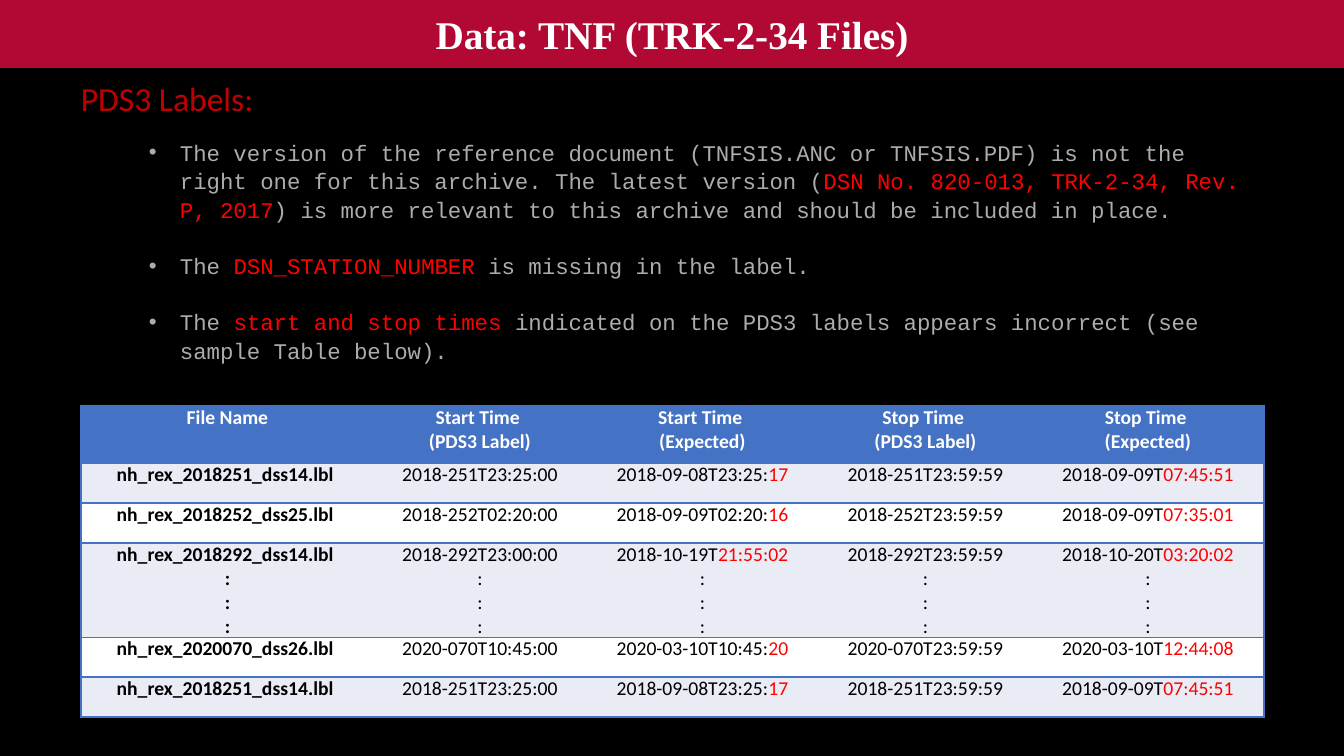
from lxml import etree
from pptx import Presentation
from pptx.dml.color import RGBColor
from pptx.enum.shapes import MSO_SHAPE
from pptx.enum.text import MSO_ANCHOR, MSO_AUTO_SIZE, PP_ALIGN
from pptx.oxml.ns import qn
from pptx.util import Pt

EMU_PER_PX = 914400 / 100.8
RECTANGLE = MSO_SHAPE.RECTANGLE
MIDDLE = MSO_ANCHOR.MIDDLE
GROW = MSO_AUTO_SIZE.SHAPE_TO_FIT_TEXT
CENTER = PP_ALIGN.CENTER
LEFT = PP_ALIGN.LEFT

BLACK = "000000"
WHITE = "FFFFFF"
CRIMSON = "B20834"
DARK_RED = "C00000"
RED = "FF0000"
GRAY = "AFABAB"
BLUE = "4472C4"
PALE_BLUE = "E9EBF5"

TITLE = "Data: TNF (TRK-2-34 Files)"
HEADING = "PDS3 Labels:"
BULLETS = [
    "The version of the reference document (TNFSIS.ANC or TNFSIS.PDF) is not the "
    "right one for this archive. The latest version (|DSN No. 820-013, TRK-2-34, "
    "Rev. P, 2017|) is more relevant to this archive and should be included in place.",
    "The |DSN_STATION_NUMBER |is missing in the label.",
    "The |start and stop times |indicated on the PDS3 labels appears incorrect "
    "(see sample Table below).",
]
HEADER = [
    ["File Name"],
    ["Start Time ", "(PDS3 Label)"],
    ["Start Time ", "(Expected)"],
    ["Stop Time ", "(PDS3 Label)"],
    ["Stop Time ", "(Expected)"],
]
FILES = [
    ["nh_rex_2018251_dss14.lbl ", "2018-251T23:25:00", "2018-09-08T23:25:|17",
     "2018-251T23:59:59", "2018-09-09T|07:45:51"],
    ["nh_rex_2018252_dss25.lbl ", "2018-252T02:20:00", "2018-09-09T02:20:|16",
     "2018-252T23:59:59", "2018-09-09T|07:35:01"],
    ["nh_rex_2018292_dss14.lbl ", "2018-292T23:00:00", "2018-10-19T|21:55:02",
     "2018-292T23:59:59", "2018-10-20T|03:20:02"],
    ["nh_rex_2020070_dss26.lbl ", "2020-070T10:45:00", "2020-03-10T10:45:|20",
     "2020-070T23:59:59", "2020-03-10T|12:44:08"],
    ["nh_rex_2018251_dss14.lbl ", "2018-251T23:25:00", "2018-09-08T23:25:|17",
     "2018-251T23:59:59", "2018-09-09T|07:45:51"],
]
ELLIPSIS_ROW = 2
ELLIPSIS = [":"] * 3
COLUMN_WIDTHS = [293, 212, 233, 213, 232]
ROW_HEIGHTS = [57, 40, 40, 94, 40, 40]


def px(length):
    return round(length * EMU_PER_PX)


def area(*lengths):
    return [px(length) for length in lengths]


def rgb(color):
    return RGBColor.from_string(color)


def paint(target, color):
    target.fill.solid()
    target.fill.fore_color.rgb = rgb(color)


def write(frame, lines, font, size, color, bold=False, align=LEFT):
    for index, line in enumerate(lines):
        para = frame.paragraphs[0] if index == 0 else frame.add_paragraph()
        para.alignment = align
        para.font.name = font
        para.font.size = Pt(size)
        para.font.bold = bold
        para.font.color.rgb = rgb(color)
        for position, text in enumerate(line.split("|")):
            span = para.add_run()
            span.text = text
            if position % 2:
                span.font.color.rgb = rgb(RED)


def add_banner(page):
    banner = page.shapes.add_shape(RECTANGLE, *area(0, 0, 1344, 68))
    banner.shadow.inherit = False
    banner.line.fill.background()
    paint(banner, CRIMSON)
    banner.text_frame.vertical_anchor = MIDDLE
    write(banner.text_frame, [TITLE], "Times New Roman", 28, WHITE, True, CENTER)


def add_text(page, place, lines, font, size, color, wrap):
    box = page.shapes.add_textbox(*area(*place))
    frame = box.text_frame
    frame.word_wrap = wrap
    frame.auto_size = GROW
    write(frame, lines, font, size, color)
    return frame


def add_bullets(frame, indent):
    for para in frame.paragraphs:
        para.line_spacing = 1.07
        if para.text != frame.paragraphs[-1].text:
            para.space_after = Pt(19.4)
        properties = para._p.get_or_add_pPr()
        properties.set("marL", str(px(indent)))
        properties.set("indent", str(-px(indent)))
        bullet_font = etree.Element(qn("a:buFont"), typeface="Arial")
        bullet = etree.Element(qn("a:buChar"), char="•")
        default_font = properties.find(qn("a:defRPr"))
        default_font.addprevious(bullet_font)
        default_font.addprevious(bullet)


def set_borders(cell, visible_sides):
    properties = cell._tc.get_or_add_tcPr()
    for index, side in enumerate("LRTB"):
        line = etree.Element(qn(f"a:ln{side}"), w=str(Pt(1)))
        if side in visible_sides:
            fill = etree.SubElement(line, qn("a:solidFill"))
            etree.SubElement(fill, qn("a:srgbClr"), val=BLUE)
        else:
            etree.SubElement(line, qn("a:noFill"))
        properties.insert(index, line)


def fill_cell(cell, lines, fill, color, bold, sides):
    cell.margin_left = cell.margin_right = px(6)
    cell.margin_top = cell.margin_bottom = 0
    paint(cell, fill)
    set_borders(cell, sides)
    write(cell.text_frame, lines, "Calibri", 14, color, bold, CENTER)


def add_times_table(page):
    rows, columns = len(ROW_HEIGHTS), len(COLUMN_WIDTHS)
    place = area(81, 406, sum(COLUMN_WIDTHS), sum(ROW_HEIGHTS))
    table = page.shapes.add_table(rows, columns, *place).table
    for column, width in zip(table.columns, COLUMN_WIDTHS):
        column.width = px(width)
    for row, height in zip(table.rows, ROW_HEIGHTS):
        row.height = px(height)
    sides = ["LTB"] + ["TB"] * (columns - 2) + ["RTB"]
    for column, lines in enumerate(HEADER):
        fill_cell(table.cell(0, column), lines, BLUE, WHITE, True, sides[column])
    for index, values in enumerate(FILES):
        fill = WHITE if index % 2 else PALE_BLUE
        for column, value in enumerate(values):
            lines = [value] + (ELLIPSIS if index == ELLIPSIS_ROW else [])
            cell = table.cell(index + 1, column)
            fill_cell(cell, lines, fill, BLACK, column == 0, sides[column])


def main():
    deck = Presentation()
    deck.slide_width, deck.slide_height = area(1344, 756)
    page = deck.slides.add_slide(deck.slide_layouts[6])
    paint(page.background, BLACK)
    add_banner(page)
    add_text(page, (71, 73, 195, 50), [HEADING], "Calibri", 24, DARK_RED, False)
    notes = add_text(page, (139, 132, 1135, 228), BULLETS, "Courier New", 16, GRAY, True)
    add_bullets(notes, 31)
    add_times_table(page)
    deck.save("out.pptx")


if __name__ == "__main__":
    main()
